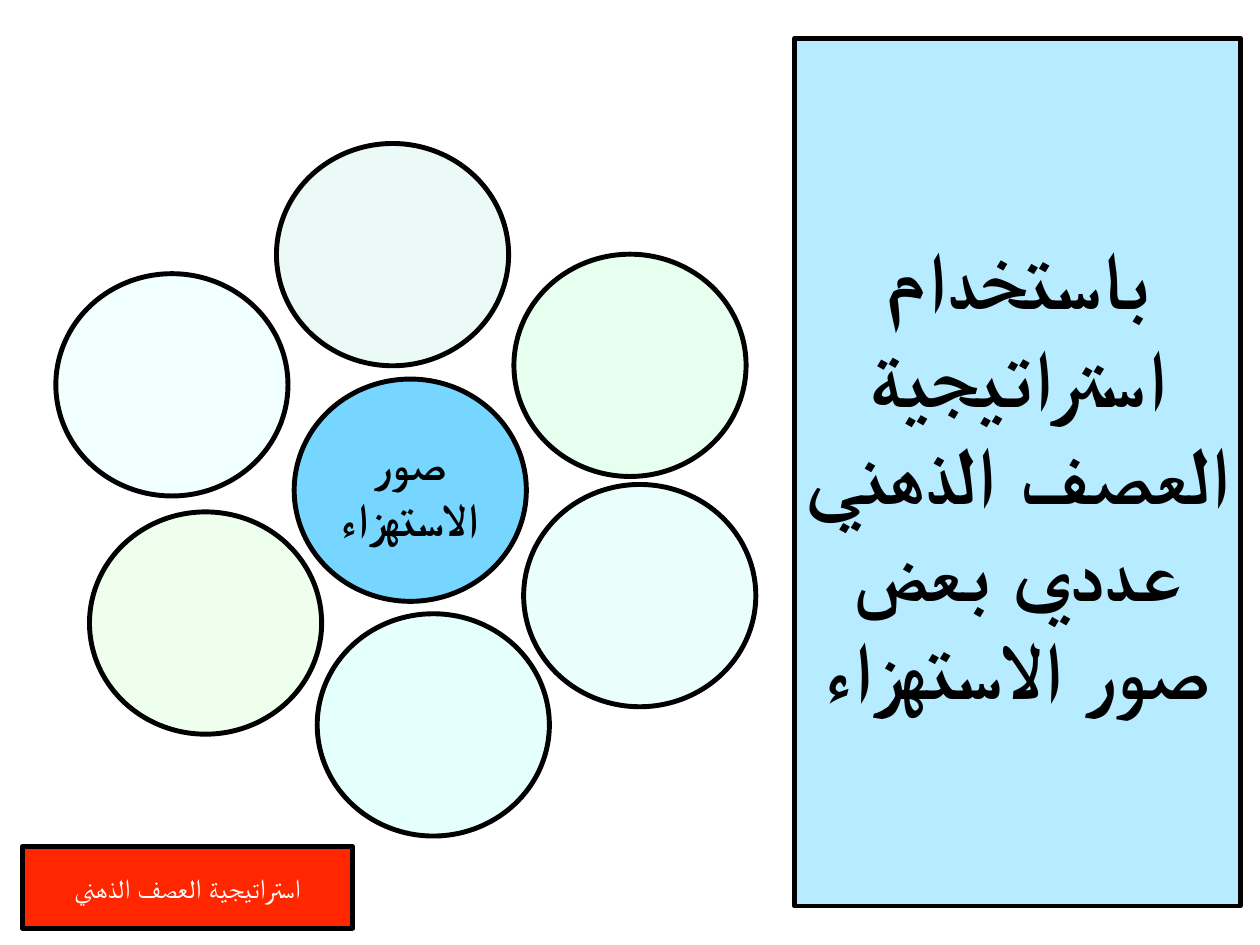
from dataclasses import dataclass
from typing import Optional

from lxml import etree
from pptx import Presentation
from pptx import util as u
from pptx.dml.color import RGBColor
from pptx.enum import shapes, text
from pptx.oxml import ns

BLACK = RGBColor(0x00, 0x00, 0x00)
WHITE = RGBColor(0xFF, 0xFF, 0xFF)
RED = RGBColor(0xFF, 0x26, 0x00)
SKY = RGBColor(0x76, 0xD6, 0xFF)
PALE_SKY = RGBColor(0xB7, 0xEB, 0xFF)
GREEN_MINT = RGBColor(0xE6, 0xFF, 0xEF)
GREY_MINT = RGBColor(0xEB, 0xFA, 0xF7)
LIME_MINT = RGBColor(0xEE, 0xFF, 0xED)
ICE = RGBColor(0xF1, 0xFF, 0xFE)
AQUA = RGBColor(0xEA, 0xFF, 0xFC)
DEEP_AQUA = RGBColor(0xE4, 0xFF, 0xFC)

FONT = "Arial"
CIRCLE_W, CIRCLE_H = 2.62, 2.51


@dataclass(frozen=True)
class Label:
    words: str
    size: int
    color: RGBColor = BLACK
    bold: bool = True
    rtl: bool = False


@dataclass(frozen=True)
class Circle:
    left: float
    top: float
    fill: RGBColor
    label: Optional[Label] = None


CIRCLES = [
    Circle(5.8, 2.87, GREEN_MINT),
    Circle(3.12, 1.62, GREY_MINT),
    Circle(3.32, 4.28, SKY, Label("صور الاستهزاء", 38)),
    Circle(1.01, 5.78, LIME_MINT),
    Circle(0.63, 3.09, ICE),
    Circle(5.91, 5.47, AQUA),
    Circle(3.58, 6.93, DEEP_AQUA),
]
TASK = Label("باستخدام استراتيجية العصف الذهني عددي بعض صور الاستهزاء", 66)
STRATEGY = Label("استراتيجية العصف الذهني", 22, WHITE, bold=False, rtl=True)


def paint(sp, fill: RGBColor) -> None:
    sp.fill.solid()
    sp.fill.fore_color.rgb = fill
    sp.line.color.rgb = BLACK
    sp.line.width = u.Pt(4)


def write(sp, label: Label) -> None:
    tf = sp.text_frame
    tf.word_wrap = True
    tf.auto_size = text.MSO_AUTO_SIZE.NONE
    tf.vertical_anchor = text.MSO_ANCHOR.MIDDLE
    tf.margin_left = tf.margin_right = u.Inches(0.06)
    tf.margin_top = tf.margin_bottom = u.Inches(0.06)
    p = tf.paragraphs[0]
    p.alignment = text.PP_ALIGN.CENTER
    if label.rtl:
        p._p.get_or_add_pPr().set("rtl", "1")
    r = p.add_run()
    r.text = label.words
    r.font.name = FONT
    r.font.size = u.Pt(label.size)
    r.font.bold = label.bold
    r.font.color.rgb = label.color
    cs = etree.SubElement(r._r.get_or_add_rPr(), ns.qn("a:cs"))
    cs.set("typeface", FONT)


def add_box(s, kind, left: float, top: float, width: float, height: float,
            fill: RGBColor, label: Optional[Label] = None) -> None:
    sp = s.shapes.add_shape(kind, u.Inches(left), u.Inches(top),
                            u.Inches(width), u.Inches(height))
    sp.shadow.inherit = False
    paint(sp, fill)
    if label:
        write(sp, label)


def add_task(s) -> None:
    sp = s.shapes.title
    sp.left, sp.top = u.Inches(8.97), u.Inches(0.43)
    sp.width, sp.height = u.Inches(5.03), u.Inches(9.8)
    paint(sp, PALE_SKY)
    write(sp, TASK)


def main() -> None:
    prs = Presentation()
    prs.slide_width, prs.slide_height = u.Inches(14.22), u.Inches(10.67)
    s = prs.slides.add_slide(prs.slide_layouts.get_by_name("Title Only"))
    for c in CIRCLES:
        add_box(s, shapes.MSO_SHAPE.OVAL, c.left, c.top, CIRCLE_W, CIRCLE_H, c.fill, c.label)
    add_task(s)
    add_box(s, shapes.MSO_SHAPE.RECTANGLE, 0.25, 9.56, 3.73, 0.92, RED, STRATEGY)
    prs.save("out.pptx")


if __name__ == "__main__":
    main()
